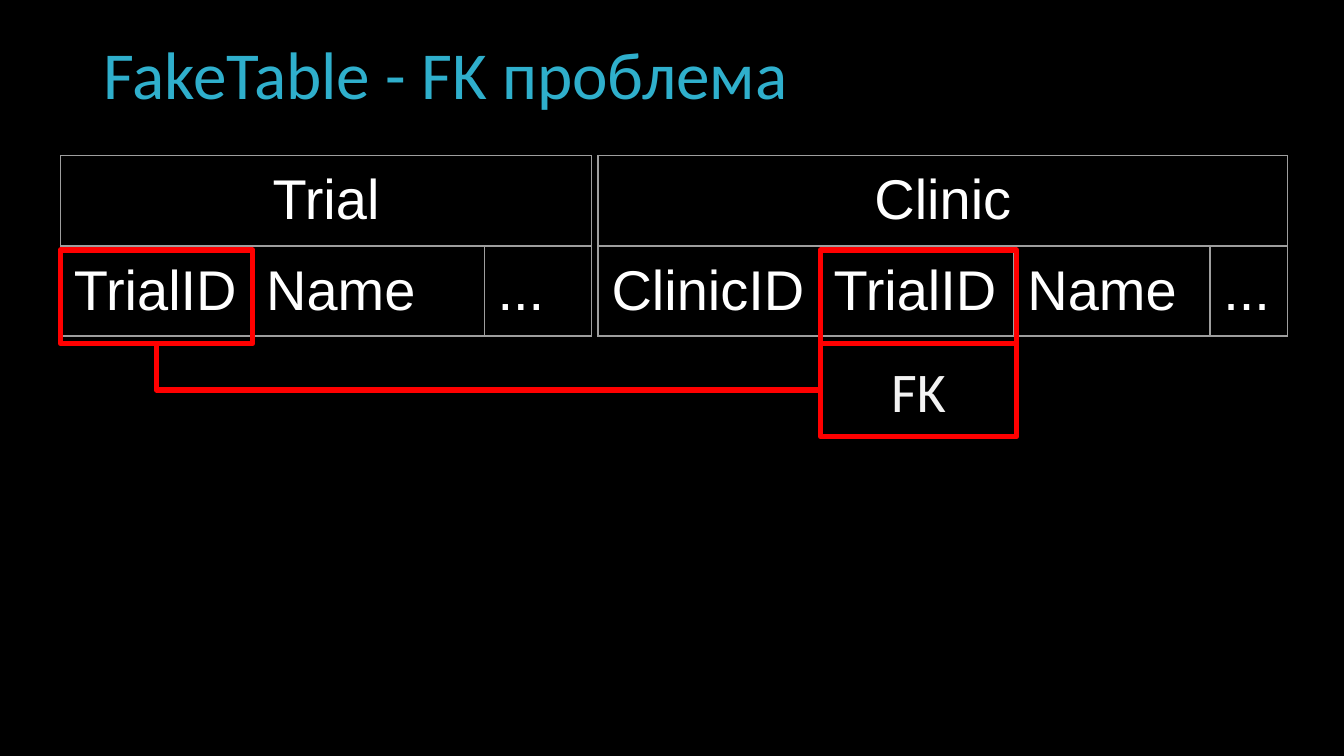
import pptx
import pptx.dml.color
import pptx.enum.shapes
import pptx.enum.text
import pptx.oxml
import pptx.oxml.ns
import pptx.util

Pt = pptx.util.Pt
Align = pptx.enum.text.PP_ALIGN
Anchor = pptx.enum.text.MSO_ANCHOR
COLORS = {
    name: pptx.dml.color.RGBColor.from_string(value)
    for name, value in {
        "black": "000000",
        "white": "FFFFFF",
        "title": "2FAFCC",
        "grid": "9E9E9E",
        "key": "FF0000",
        "key_text": "F3F3F3",
    }.items()
}
TABLE_TOP, ROW_HEIGHT, INSET = 83.5, 48.25, 7.2
KEY_TOP, KEY_HEIGHT = 134, 50


def set_font(paragraph, name, size, color):
    paragraph.font.name = name
    paragraph.font.size = Pt(size)
    paragraph.font.color.rgb = COLORS[color]


def add_key_box(left, top, width):
    box = page.shapes.add_shape(
        pptx.enum.shapes.MSO_SHAPE.RECTANGLE, Pt(left), Pt(top), Pt(width), Pt(KEY_HEIGHT)
    )
    box.shadow.inherit = False
    box.fill.background()
    box.line.color.rgb = COLORS["key"]
    box.line.width = Pt(3)
    return box


deck = pptx.Presentation()
deck.slide_width, deck.slide_height = Pt(720), Pt(405)
page = deck.slides.add_slide(deck.slide_layouts[5])
page.background.fill.solid()
page.background.fill.fore_color.rgb = COLORS["black"]

# Title
title = page.shapes.title
title.left, title.top, title.width, title.height = Pt(49.7), Pt(19.4), Pt(651), Pt(44.6)
frame = title.text_frame
frame.text = "FakeTable - FK проблема"
frame.vertical_anchor = Anchor.MIDDLE
frame.margin_left = frame.margin_right = Pt(5.76)
frame.margin_top = frame.margin_bottom = Pt(2.88)
para = frame.paragraphs[0]
para.alignment = Align.LEFT
para.line_spacing = 0.9
set_font(para, "Calibri", 36, "title")

# Tables: heading, left edge, columns with their widths
tables = [
    ("Trial", 32.4, [("TrialID", 103), ("Name", 124), ("...", 57.6)]),
    ("Clinic", 320.4, [("ClinicID", 119), ("TrialID", 103.8), ("Name", 105), ("...", 41.6)]),
]
for heading, left, columns in tables:
    width = sum(column_width for _, column_width in columns)
    table = page.shapes.add_table(
        2, len(columns), Pt(left), Pt(TABLE_TOP), Pt(width), Pt(2 * ROW_HEIGHT)
    ).table
    table.first_row = table.horz_banding = False
    table.cell(0, 0).merge(table.cell(0, len(columns) - 1))
    table.cell(0, 0).text = heading
    table.cell(0, 0).text_frame.paragraphs[0].alignment = Align.CENTER
    for index, (name, column_width) in enumerate(columns):
        table.columns[index].width = Pt(column_width)
        table.cell(1, index).text = name
    for cell in table.iter_cells():
        cell.margin_left = cell.margin_right = Pt(INSET)
        cell.margin_top = cell.margin_bottom = Pt(INSET)
        set_font(cell.text_frame.paragraphs[0], "Arial", 30, "white")
        properties = cell._tc.get_or_add_tcPr()
        for side in "LRTB":
            properties.append(pptx.oxml.parse_xml(
                f'<a:ln{side} {pptx.oxml.ns.nsdecls("a")} w="{Pt(0.75)}"><a:solidFill>'
                f'<a:srgbClr val="{COLORS["grid"]}"/></a:solidFill></a:ln{side}>'
            ))
        cell.fill.background()

# Key outlines and foreign key label
primary_key = add_key_box(32.4, KEY_TOP, 103)
add_key_box(439.6, KEY_TOP, 105)
foreign_key = add_key_box(439.6, KEY_TOP + KEY_HEIGHT, 105)
foreign_key.fill.solid()
foreign_key.fill.fore_color.rgb = COLORS["black"]
frame = foreign_key.text_frame
frame.text = "FK"
frame.vertical_anchor = Anchor.MIDDLE
frame.margin_left = frame.margin_right = Pt(INSET)
frame.margin_top = frame.margin_bottom = Pt(INSET)
frame.paragraphs[0].alignment = Align.CENTER
set_font(frame.paragraphs[0], "Calibri", 30, "key_text")

# Single-bend link from the foreign key to the primary key
link = page.shapes.add_connector(
    pptx.enum.shapes.MSO_CONNECTOR.ELBOW,
    foreign_key.left, foreign_key.top + foreign_key.height // 2,
    primary_key.left + primary_key.width // 2, primary_key.top + primary_key.height,
)
link.begin_connect(foreign_key, 1)
link.end_connect(primary_key, 2)
link.line.color.rgb = COLORS["key"]
link.line.width = Pt(3)
shape_properties = link._element.spPr
shape_properties.find(pptx.oxml.ns.qn("a:prstGeom")).set("prst", "bentConnector2")
shape_properties.append(pptx.oxml.parse_xml(f'<a:effectLst {pptx.oxml.ns.nsdecls("a")}/>'))

deck.save("out.pptx")
